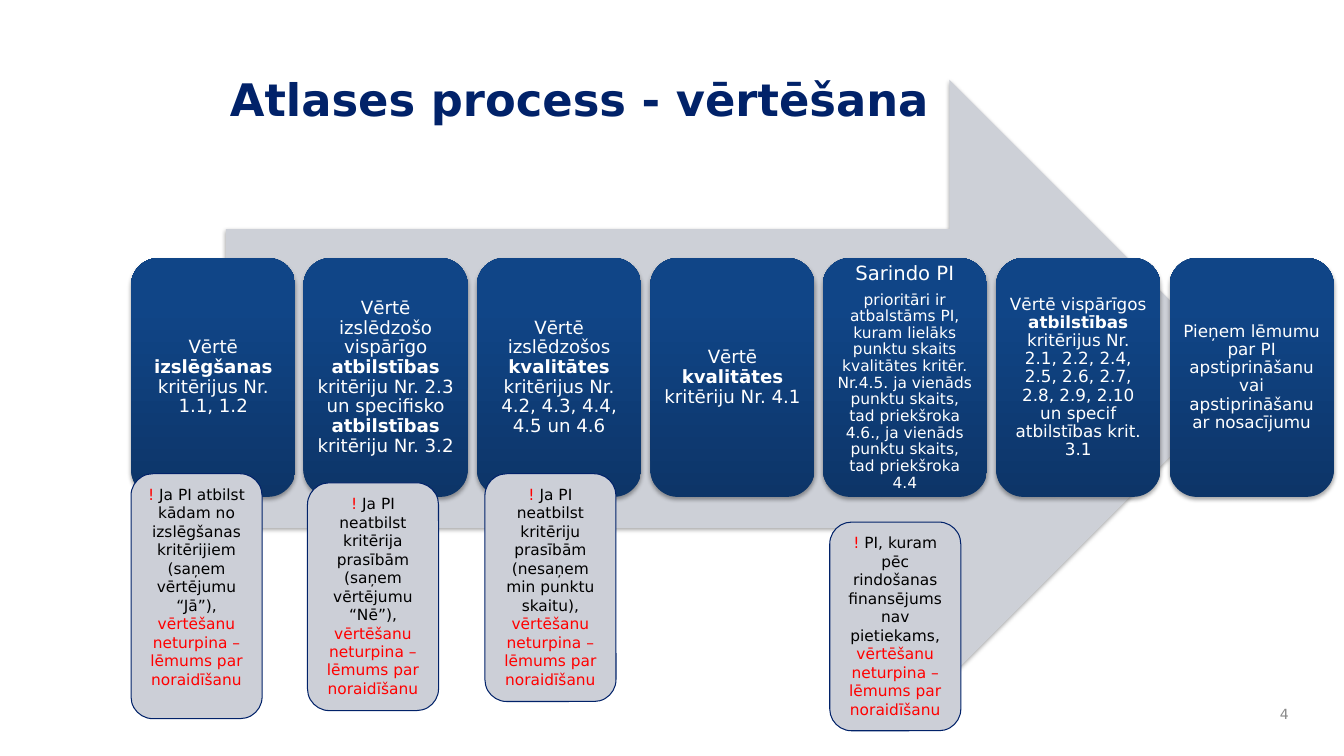
from copy import deepcopy

from lxml import etree
from pptx import Presentation
from pptx import util as u
from pptx.dml.color import RGBColor
from pptx.enum import shapes, text
from pptx.oxml.ns import qn

NAVY = RGBColor(0x01, 0x22, 0x69)
STEP_DARK = RGBColor(0x0D, 0x35, 0x68)
STEP_MID = RGBColor(0x10, 0x45, 0x87)
STEP_LIGHT = RGBColor(0x0E, 0x45, 0x8A)
ARROW_GREY = RGBColor(0xCD, 0xD0, 0xD7)
NOTE_GREY = RGBColor(0xCC, 0xCF, 0xD7)
NUMBER_GREY = RGBColor(0x89, 0x89, 0x89)
WHITE = RGBColor(0xFF, 0xFF, 0xFF)
BLACK = RGBColor(0x00, 0x00, 0x00)
RED = RGBColor(0xFF, 0x00, 0x00)

PX = u.Inches(1) // 100
FONT = "DejaVu Sans"

# Each step: paragraphs of (size, text); *stars* mark bold words
STEPS = [
    [(13, "Vērtē *izslēgšanas* kritērijus Nr. 1.1, 1.2")],
    [(13, "Vērtē izslēdzošo vispārīgo *atbilstības* kritēriju Nr. 2.3 "
          "un specifisko *atbilstības* kritēriju Nr. 3.2")],
    [(13, "Vērtē izslēdzošos *kvalitātes* kritērijus Nr. 4.2, 4.3, 4.4, 4.5 un 4.6")],
    [(13, "Vērtē *kvalitātes* kritēriju Nr. 4.1")],
    [(14, "Sarindo PI"),
     (11, "prioritāri ir atbalstāms PI, kuram lielāks punktu skaits kvalitātes "
          "kritēr. Nr.4.5. ja vienāds punktu skaits, tad priekšroka 4.6., "
          "ja vienāds punktu skaits, tad priekšroka 4.4")],
    [(12, "Vērtē vispārīgos *atbilstības* kritērijus Nr. 2.1, 2.2, 2.4, 2.5, "
          "2.6, 2.7, 2.8, 2.9, 2.10 un specif atbilstības krit. 3.1")],
    [(12, "Pieņem lēmumu par PI apstiprināšanu vai apstiprināšanu ar nosacījumu")],
]

# Each note: left, top, height, condition
NOTES = [
    (130, 470, 243, "Ja PI atbilst kādam no izslēgšanas kritērijiem (saņem vērtējumu “Jā”), "),
    (305, 479, 226, "Ja PI neatbilst kritērija prasībām (saņem vērtējumu “Nē”), "),
    (481, 470, 226, "Ja PI neatbilst kritēriju prasībām (nesaņem min punktu skaitu), "),
    (823, 518, 207, "PI, kuram pēc rindošanas finansējums nav pietiekams, "),
]
OUTCOME = "vērtēšanu neturpina – lēmums par noraidīšanu"


class SlideBuilder:
    def __init__(self, page):
        self.page = page

    def style(self, para, size, colour=None, align=text.PP_ALIGN.CENTER):
        para.alignment = align
        para.font.name = FONT
        para.font.size = u.Pt(size)
        if colour is not None:
            para.font.color.rgb = colour

    def frame(self, box, anchor, margin_x=10, margin_y=5):
        frame = box.text_frame
        frame.word_wrap = True
        frame.vertical_anchor = anchor
        frame.margin_left = frame.margin_right = margin_x * PX
        frame.margin_top = frame.margin_bottom = margin_y * PX
        return frame

    def shape(self, kind, left, top, width, height):
        box = self.page.shapes.add_shape(
            kind, left * PX, top * PX, width * PX, height * PX)
        box.shadow.inherit = False
        box.line.fill.background()
        return box

    def soft_shadow(self, box):
        effects = box.element.spPr.find(qn("a:effectLst"))
        shadow = etree.SubElement(effects, qn("a:outerShdw"), blurRad="40000",
                                  dist="23000", dir="5400000", rotWithShape="0")
        colour = etree.SubElement(shadow, qn("a:srgbClr"), val=str(BLACK))
        etree.SubElement(colour, qn("a:alpha"), val="35000")

    def title(self, words, left, top, width, height):
        box = self.page.shapes.title
        box.left, box.top = left * PX, top * PX
        box.width, box.height = width * PX, height * PX
        frame = self.frame(box, text.MSO_ANCHOR.TOP)
        frame.auto_size = text.MSO_AUTO_SIZE.NONE
        para = frame.paragraphs[0]
        para.text = words
        self.style(para, 32, NAVY, text.PP_ALIGN.LEFT)
        para.font.bold = True

    def arrow(self, left, top, width, height):
        box = self.shape(shapes.MSO_SHAPE.RIGHT_ARROW, left, top, width, height)
        box.fill.solid()
        box.fill.fore_color.rgb = ARROW_GREY
        self.soft_shadow(box)

    def step(self, left, paragraphs):
        box = self.shape(shapes.MSO_SHAPE.ROUNDED_RECTANGLE, left, 256, 163, 237)
        self.soft_shadow(box)
        box.fill.gradient()
        box.fill.gradient_angle = 90
        last = box.element.spPr.findall(".//" + qn("a:gs"))[-1]
        last.addprevious(deepcopy(last))
        ramp = [(0, STEP_DARK), (0.8, STEP_MID), (1, STEP_LIGHT)]
        for stop, (position, colour) in zip(box.fill.gradient_stops, ramp):
            stop.position = position
            stop.color.rgb = colour

        frame = self.frame(box, text.MSO_ANCHOR.MIDDLE, 5, 5)
        for index, (size, words) in enumerate(paragraphs):
            para = frame.add_paragraph() if index else frame.paragraphs[0]
            para.line_spacing = 0.9
            para.space_after = u.Pt(5)
            self.style(para, size, WHITE)
            for part, piece in enumerate(words.split("*")):
                span = para.add_run()
                span.text = piece
                if part % 2:
                    span.font.bold = True

    def note(self, left, top, height, condition):
        box = self.shape(shapes.MSO_SHAPE.ROUNDED_RECTANGLE, left, top, 130, height)
        box.fill.solid()
        box.fill.fore_color.rgb = NOTE_GREY
        box.line.color.rgb = NAVY
        box.line.width = u.Pt(0.75)
        frame = self.frame(box, text.MSO_ANCHOR.TOP)
        frame.auto_size = text.MSO_AUTO_SIZE.SHAPE_TO_FIT_TEXT
        para = frame.paragraphs[0]
        self.style(para, 11)
        for words, colour in (("! ", RED), (condition, BLACK), (OUTCOME, RED)):
            span = para.add_run()
            span.text = words
            span.font.color.rgb = colour

    def page_number(self, words, left, top, width, height):
        box = self.page.shapes.add_textbox(left * PX, top * PX, width * PX, height * PX)
        para = self.frame(box, text.MSO_ANCHOR.MIDDLE).paragraphs[0]
        para.text = words
        self.style(para, 10, NUMBER_GREY, text.PP_ALIGN.RIGHT)


def main():
    deck = Presentation()
    deck.slide_width, deck.slide_height = u.Inches(13.33), u.Inches(7.5)
    builder = SlideBuilder(deck.slides.add_slide(deck.slide_layouts[5]))

    # Title, page number and background arrow
    builder.title("Atlases process - vērtēšana", 218, 66, 964, 85)
    builder.page_number("4", 1244, 692, 44, 33)
    builder.arrow(224, 79, 1014, 593)

    # Evaluation steps, evenly spread between the first and last left edge
    first, last = 130, 1160
    for index, paragraphs in enumerate(STEPS):
        builder.step(first + (last - first) * index // (len(STEPS) - 1), paragraphs)

    # Rejection notes
    for note in NOTES:
        builder.note(*note)

    deck.save("out.pptx")


if __name__ == "__main__":
    main()
